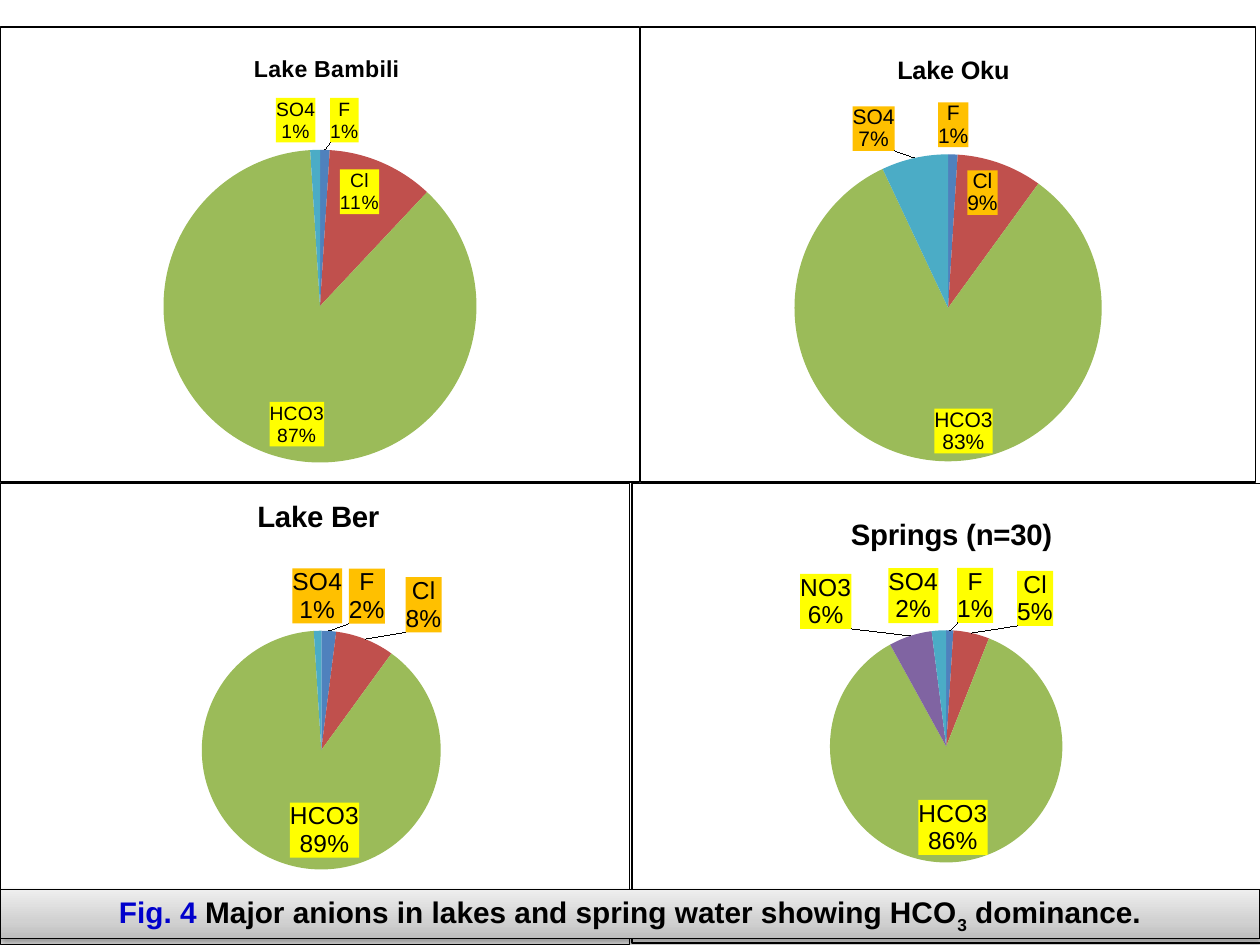
from dataclasses import dataclass

from lxml import etree
from pptx import Presentation
from pptx.chart.chart import Chart
from pptx.chart.data import CategoryChartData
from pptx.dml.color import RGBColor
from pptx.enum.chart import XL_CHART_TYPE
from pptx.enum.text import MSO_ANCHOR, MSO_AUTO_SIZE, PP_ALIGN
from pptx.enum.shapes import MSO_SHAPE
from pptx.oxml import parse_xml
from pptx.oxml.ns import nsdecls, qn
from pptx.slide import Slide
from pptx.util import Inches, Pt

PIE = XL_CHART_TYPE.PIE
RECTANGLE = MSO_SHAPE.RECTANGLE
CENTER = PP_ALIGN.CENTER
MIDDLE = MSO_ANCHOR.MIDDLE
GROW = MSO_AUTO_SIZE.SHAPE_TO_FIT_TEXT

FONT = "Arial"
COLORS = {
    "F": "4F81BD", "Cl": "C0504D", "HCO3": "9BBB59", "NO3": "8064A2", "SO4": "4BACC6",
    "text": "000000", "figure": "0000CC", "paper": "FFFFFF",
    "yellow": "FFFF00", "orange": "FFC000",
    "band_dark": "BDBDBD", "band_mid": "D1D1D1", "band_light": "EEEEEE",
}
ANIONS = ["F", "Cl", "HCO3", "NO3", "SO4"]
ROW_TOPS = (0.21, 3.83)


@dataclass
class Label:
    """A slice label: its highlight, its place and its sideways shift as a share of the chart."""
    highlight: str = "yellow"
    place: str = "outEnd"
    shift: float = 0


@dataclass
class Water:
    """One water body: its cell, text size, values, pie geometry in shares and labels."""
    name: str
    left: float
    row: int
    width: float
    height: float
    size: int
    values: tuple[int, ...]
    title_at: tuple[float, float]
    pie_center: float
    pie_top: float
    pie_width: float
    labels: dict[str, Label]


INNER = Label(place="inEnd")
WATERS = [
    Water("Lake Ber", 0, 1, 5, 3.67, 14, (2, 8, 89, 0, 1), (0.4, 0.02), 0.51, 0.32, 0.38,
          {"F": Label("orange", shift=0.06), "Cl": Label("orange", shift=0.06),
           "HCO3": INNER, "NO3": Label("orange", shift=-0.09), "SO4": Label("orange")}),
    Water("Lake Oku", 5.08, 0, 4.89, 3.62, 12, (1, 9, 83, 0, 7), (0.41, 0.05), 0.5, 0.28, 0.5,
          {"F": Label("orange"), "Cl": Label("orange", "inEnd"),
           "HCO3": INNER, "SO4": Label("orange", shift=-0.03)}),
    Water("Lake Bambili", 0, 0, 5.08, 3.62, 11, (1, 11, 87, 0, 1), (0.39, 0.05), 0.5, 0.27, 0.49,
          {"F": Label(shift=0.03), "Cl": INNER, "HCO3": INNER, "SO4": Label(shift=-0.03)}),
    Water("Springs (n=30)", 5.01, 1, 5, 3.66, 14, (1, 5, 86, 6, 2), (0.34, 0.06), 0.5, 0.32, 0.37,
          {"F": Label(shift=0.04), "Cl": Label(shift=0.07), "HCO3": INNER,
           "NO3": Label(shift=-0.09), "SO4": Label(shift=-0.04)}),
]


def rgb(name: str) -> RGBColor:
    """Return a palette colour."""
    return RGBColor.from_string(COLORS[name])


def layout_xml(settings: dict[str, str | float]) -> str:
    """Return a manual chart layout."""
    parts = "".join(f'<c:{key} val="{value}"/>' for key, value in settings.items())
    return f'<c:layout {nsdecls("c")}><c:manualLayout>{parts}</c:manualLayout></c:layout>'


def place_part(part: etree.ElementBase, index: int, settings: dict[str, str | float]) -> None:
    """Give a chart part a manual layout."""
    for automatic in part.findall(qn("c:layout")):
        part.remove(automatic)
    part.insert(index, parse_xml(layout_xml(settings)))


def label_xml(index: int, label: Label | None) -> str:
    """Return one slice label, or its removal."""
    if label is None:
        content = '<c:delete val="1"/>'
    else:
        layout = layout_xml({"x": label.shift, "y": 0}) if label.shift else ""
        content = (
            f'{layout}<c:numFmt formatCode="0%" sourceLinked="0"/>'
            f'<c:spPr><a:solidFill><a:srgbClr val="{COLORS[label.highlight]}"/></a:solidFill></c:spPr>'
            f'<c:dLblPos val="{label.place}"/>'
            '<c:showLegendKey val="0"/><c:showVal val="0"/><c:showCatName val="1"/>'
            '<c:showSerName val="0"/><c:showPercent val="1"/><c:showBubbleSize val="0"/>'
            '<c:separator>\n</c:separator>'
        )
    return f'<c:dLbl {nsdecls("c", "a")}><c:idx val="{index}"/>{content}</c:dLbl>'


def label_slices(chart: Chart, water: Water) -> None:
    """Colour the slices and label them with anion and percentage."""
    series = chart.plots[0].series[0]
    labels = series.data_labels
    labels.show_value = False
    labels.show_category_name = True
    labels.show_percentage = True
    labels.number_format = "0%"
    labels.number_format_is_linked = False
    labels.font.size = Pt(water.size)
    labels.font.name = FONT
    labels.font.color.rgb = rgb("text")
    for index, anion in enumerate(ANIONS):
        fill = series.points[index].format.fill
        fill.solid()
        fill.fore_color.rgb = rgb(anion)
        labels._element.insert(index, parse_xml(label_xml(index, water.labels.get(anion))))


def draw_water(slide: Slide, water: Water) -> None:
    """Draw the anion pie of one water body."""
    data = CategoryChartData()
    data.categories = ANIONS
    data.add_series("Series 1", water.values)
    chart = slide.shapes.add_chart(
        PIE, Inches(water.left), Inches(ROW_TOPS[water.row]),
        Inches(water.width), Inches(water.height), data).chart
    chart.has_legend = False
    chart.font.size = Pt(water.size)
    chart.font.name = FONT
    chart.font.color.rgb = rgb("text")
    chart.plots[0].vary_by_categories = True

    chart.has_title = True
    heading = chart.chart_title.text_frame
    heading.text = water.name
    font = heading.paragraphs[0].runs[0].font
    font.size = Pt(water.size * 1.2)
    font.bold = True
    font.name = FONT
    font.color.rgb = rgb("text")
    title_x, title_y = water.title_at
    place_part(chart.chart_title._element, 1,
               {"xMode": "edge", "yMode": "edge", "x": title_x, "y": title_y})

    body = chart._chartSpace.find(qn("c:chart"))
    place_part(body.find(qn("c:plotArea")), 0, {
        "layoutTarget": "inner", "xMode": "edge", "yMode": "edge",
        "x": round(water.pie_center - water.pie_width / 2, 3), "y": water.pie_top,
        "w": water.pie_width, "h": round(water.pie_width * water.width / water.height, 3)})
    body.addnext(parse_xml(
        f'<c:spPr {nsdecls("c", "a")}><a:solidFill><a:srgbClr val="{COLORS["paper"]}"/></a:solidFill>'
        f'<a:ln w="{Pt(0.75)}"><a:solidFill><a:srgbClr val="{COLORS["text"]}"/></a:solidFill></a:ln>'
        '</c:spPr>'))
    label_slices(chart, water)


def draw_caption(slide: Slide) -> None:
    """Draw the figure caption on its shaded band."""
    band = slide.shapes.add_shape(RECTANGLE, 0, Inches(7.06), Inches(10), Inches(0.39))
    band.line.color.rgb = rgb("text")
    band.line.width = Pt(0.75)
    stops = "".join(
        f'<a:gs pos="{share * 1000}"><a:srgbClr val="{COLORS[tone]}"/></a:gs>'
        for share, tone in ((0, "band_dark"), (35, "band_mid"), (100, "band_light")))
    properties = band._element.spPr
    properties.find(qn("a:prstGeom")).addnext(parse_xml(
        f'<a:gradFill {nsdecls("a")} rotWithShape="1"><a:gsLst>{stops}</a:gsLst>'
        '<a:lin ang="16200000" scaled="1"/></a:gradFill>'))
    properties.append(parse_xml(
        f'<a:effectLst {nsdecls("a")}><a:outerShdw blurRad="{Pt(3.1)}" dist="{Pt(1.6)}" dir="5400000" '
        f'rotWithShape="0"><a:srgbClr val="{COLORS["text"]}"><a:alpha val="38000"/></a:srgbClr>'
        '</a:outerShdw></a:effectLst>'))

    frame = band.text_frame
    frame.word_wrap = True
    frame.auto_size = GROW
    frame.vertical_anchor = MIDDLE
    sentence = frame.paragraphs[0]
    sentence.alignment = CENTER
    for words, color, baseline in (
            ("Fig. 4 ", "figure", 0),
            ("Major anions in lakes and spring water showing HCO", "text", 0),
            ("3", "text", -25000),
            (" dominance.", "text", 0)):
        run = sentence.add_run()
        run.text = words
        run.font.size = Pt(17)
        run.font.bold = True
        run.font.name = FONT
        run.font.color.rgb = rgb(color)
        if baseline:
            run.font._element.set("baseline", str(baseline))


def main() -> None:
    """Build the slide and save it."""
    deck = Presentation()
    deck.slide_width, deck.slide_height = Inches(10), Inches(7.5)
    slide = deck.slides.add_slide(deck.slide_layouts[6])
    for water in WATERS:
        draw_water(slide, water)
    draw_caption(slide)
    deck.save("out.pptx")


if __name__ == "__main__":
    main()
